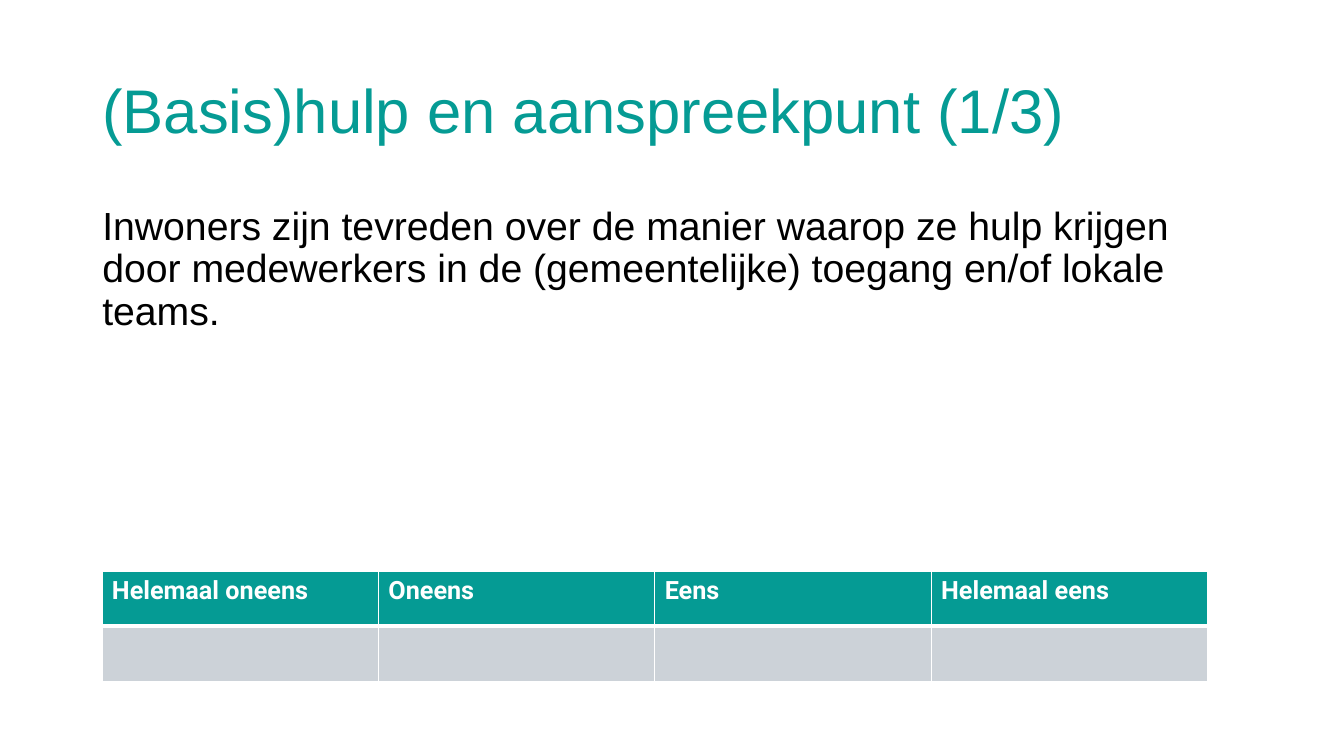
"""Build the survey slide on basic help with its four-point answer scale."""
from dataclasses import dataclass

from lxml import etree
from pptx import Presentation
from pptx.dml.color import RGBColor
from pptx.enum.text import MSO_ANCHOR
from pptx.oxml.ns import qn
from pptx.slide import Slide
from pptx.table import _Cell
from pptx.text.text import _Paragraph
from pptx.util import Pt

TOP = MSO_ANCHOR.TOP
MIDDLE = MSO_ANCHOR.MIDDLE


@dataclass(frozen=True)
class Theme:
    teal: str = "059B94"
    black: str = "000000"
    white: str = "FFFFFF"
    grey: str = "CCD2D8"
    text_font: str = "Arial"
    table_font: str = "Roboto"
    title_size: float = 44
    statement_size: float = 28
    answer_size: float = 18
    thin_rule: float = 1
    header_rule: float = 3


@dataclass(frozen=True)
class TextBlock:
    text: str
    left: float
    top: float
    width: float
    height: float
    size: float
    color: str
    anchor: MSO_ANCHOR
    space_before: float = 0


@dataclass(frozen=True)
class AnswerRow:
    labels: tuple[str, ...]
    fill: str
    top_rule: float
    bottom_rule: float


THEME = Theme()
SLIDE_WIDTH, SLIDE_HEIGHT = 960, 540
TABLE_LEFT, TABLE_TOP = 72.8, 408.2
COLUMN_WIDTH, ROW_HEIGHT = 197.45, 39.2

TEXT_BLOCKS = (
    TextBlock("(Basis)hulp en aanspreekpunt (1/3)", 66, 28.8, 828, 104.4,
              THEME.title_size, THEME.teal, MIDDLE),
    TextBlock("Inwoners zijn tevreden over de manier waarop ze hulp krijgen door "
              "medewerkers in de (gemeentelijke) toegang en/of lokale teams.",
              66, 144, 792, 342.7, THEME.statement_size, THEME.black, TOP, 10),
)
ANSWERS = ("Helemaal oneens", "Oneens", "Eens", "Helemaal eens")
ANSWER_ROWS = (
    AnswerRow(ANSWERS, THEME.teal, THEME.thin_rule, THEME.header_rule),
    AnswerRow(("",) * len(ANSWERS), THEME.grey, THEME.header_rule, THEME.thin_rule),
)


def add_run(paragraph: _Paragraph, text: str, font_name: str, size: float,
            color: str, bold: bool = False) -> None:
    """Append one formatted run to a paragraph."""
    run = paragraph.add_run()
    run.text = text
    run.font.name = font_name
    run.font.size = Pt(size)
    run.font.bold = bold
    run.font.color.rgb = RGBColor.from_string(color)


def add_text_block(slide: Slide, block: TextBlock) -> None:
    """Place a wrapped text box with a single paragraph."""
    frame = slide.shapes.add_textbox(Pt(block.left), Pt(block.top),
                                     Pt(block.width), Pt(block.height)).text_frame
    frame.word_wrap = True
    frame.vertical_anchor = block.anchor
    paragraph = frame.paragraphs[0]
    paragraph.line_spacing = 0.9
    paragraph.space_before = Pt(block.space_before)
    add_run(paragraph, block.text, THEME.text_font, block.size, block.color)


def add_borders(cell: _Cell, row: AnswerRow) -> None:
    """Draw the white rules around a cell."""
    properties = cell._tc.get_or_add_tcPr()
    rules = {"a:lnL": THEME.thin_rule, "a:lnR": THEME.thin_rule,
             "a:lnT": row.top_rule, "a:lnB": row.bottom_rule}
    for tag, width in rules.items():
        line = etree.SubElement(properties, qn(tag), w=str(Pt(width)))
        line_fill = etree.SubElement(line, qn("a:solidFill"))
        etree.SubElement(line_fill, qn("a:srgbClr"), val=THEME.white)


def add_answer_table(slide: Slide, rows: tuple[AnswerRow, ...]) -> None:
    """Place the answer scale as a table."""
    column_count = len(ANSWERS)
    table = slide.shapes.add_table(
        len(rows), column_count, Pt(TABLE_LEFT), Pt(TABLE_TOP),
        Pt(COLUMN_WIDTH * column_count), Pt(ROW_HEIGHT * len(rows))).table
    for column in table.columns:
        column.width = Pt(COLUMN_WIDTH)
    for row_index, row in enumerate(rows):
        table.rows[row_index].height = Pt(ROW_HEIGHT)
        for column_index, label in enumerate(row.labels):
            cell = table.cell(row_index, column_index)
            add_borders(cell, row)
            cell.fill.solid()
            cell.fill.fore_color.rgb = RGBColor.from_string(row.fill)
            if label:
                add_run(cell.text_frame.paragraphs[0], label, THEME.table_font,
                        THEME.answer_size, THEME.white, bold=True)


def main() -> None:
    """Assemble and save the slide."""
    presentation = Presentation()
    presentation.slide_width = Pt(SLIDE_WIDTH)
    presentation.slide_height = Pt(SLIDE_HEIGHT)
    slide = presentation.slides.add_slide(presentation.slide_layouts[6])
    for block in TEXT_BLOCKS:
        add_text_block(slide, block)
    add_answer_table(slide, ANSWER_ROWS)
    presentation.save("out.pptx")


if __name__ == "__main__":
    main()
